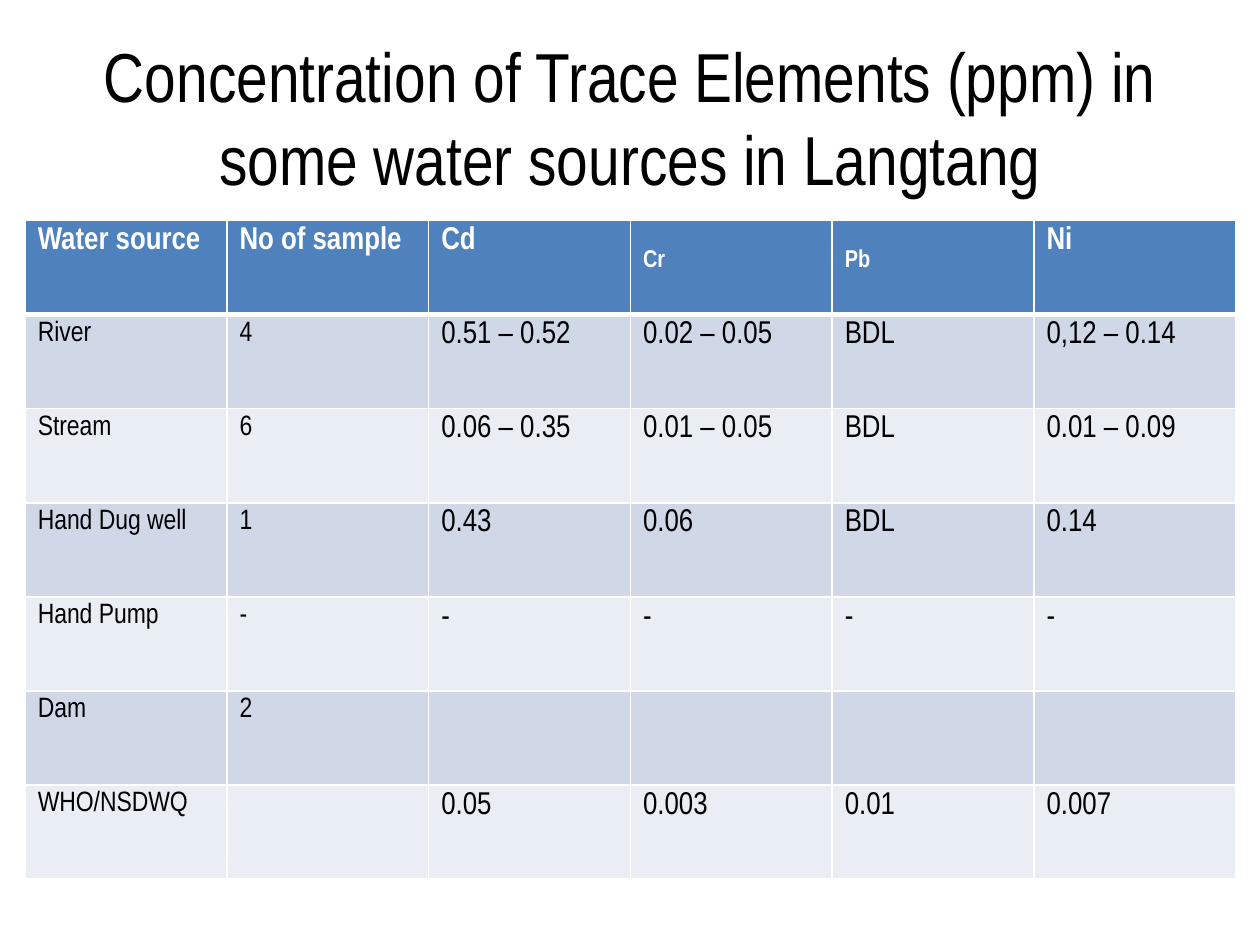
from lxml import etree
from pptx import Presentation
from pptx import util as u
from pptx.dml.color import RGBColor
from pptx.enum import text as t
from pptx.oxml import ns

Pt = u.Pt
FACE = "Arial Narrow"
HEX = {"ink": "000000", "paper": "FFFFFF", "head": "4F81BD",
       "odd": "D0D8E8", "even": "E9EDF4"}
TITLE = "Concentration of Trace Elements (ppm) in some water sources in Langtang"
ROWS = [
    ["Water source", "No of sample", "Cd", "Cr", "Pb", "Ni"],
    ["River", "4", "0.51 – 0.52", "0.02 – 0.05", "BDL", "0,12 – 0.14"],
    ["Stream", "6", "0.06 – 0.35", "0.01 – 0.05", "BDL", "0.01 – 0.09"],
    ["Hand Dug well", "1", "0.43", "0.06", "BDL", "0.14"],
    ["Hand Pump", "-", "-", "-", "-", "-"],
    ["Dam", "2", "", "", "", ""],
    ["WHO/NSDWQ", "", "0.05", "0.003", "0.01", "0.007"],
]
LOW = ("Cr", "Pb")  # headings set as subscript
COL, ROW = 115.3, 53.8


def tint(name):
    return RGBColor.from_string(HEX[name])


def write(para, words, color, **form):
    run = para.add_run()
    run.text = words
    for key, val in {"name": FACE, **form}.items():
        setattr(run.font, key, val)
    run.font.color.rgb = tint(color)
    return run


def edge(cell, **widths):
    """Draw the cell borders, in points, in the order L, R, T, B."""
    props = cell._tc.get_or_add_tcPr()
    for at, side in enumerate("LRTB"):
        line = etree.Element(ns.qn(f"a:ln{side}"), w=str(Pt(widths.get(side, 1))))
        fill = etree.SubElement(line, ns.qn("a:solidFill"))
        etree.SubElement(fill, ns.qn("a:srgbClr"), val=HEX["paper"])
        props.insert(at, line)


def add_title(slide):
    box = slide.shapes.add_textbox(Pt(36), Pt(21.6), Pt(648), Pt(90))
    frame = box.text_frame
    form = {"word_wrap": True, "vertical_anchor": t.MSO_ANCHOR.MIDDLE}
    for key, val in form.items():
        setattr(frame, key, val)
    para = frame.paragraphs[0]
    para.alignment = t.PP_ALIGN.CENTER
    write(para, TITLE, "ink", size=Pt(39.6))


def fill_cell(cell, words, row, col):
    head = row == 0
    cell.fill.solid()
    cell.fill.fore_color.rgb = tint("head" if head else "odd" if row % 2 else "even")
    edge(cell, T=3 if row == 1 else 1, B=3 if head else 1)
    if not words:
        return
    low = head and words in LOW
    size = 24 if low else 18 if head or col > 1 else 16
    run = write(cell.text_frame.paragraphs[0], words, "paper" if head else "ink",
                size=Pt(size), bold=head)
    if low:
        run._r.get_or_add_rPr().set("baseline", "-25000")


def add_grid(slide):
    high, wide = len(ROWS), len(ROWS[0])
    grid = slide.shapes.add_table(high, wide, Pt(14.4), Pt(126),
                                  Pt(COL * wide), Pt(ROW * high)).table
    grid.horz_banding = False
    for col in grid.columns:
        col.width = Pt(COL)
    for row, line in enumerate(ROWS):
        grid.rows[row].height = Pt(ROW)
        for col, words in enumerate(line):
            fill_cell(grid.cell(row, col), words, row, col)


def main():
    deck = Presentation()
    deck.slide_width, deck.slide_height = Pt(720), Pt(540)
    slide = deck.slides.add_slide(deck.slide_layouts[6])
    add_title(slide)
    add_grid(slide)
    deck.save("out.pptx")


if __name__ == "__main__":
    main()
